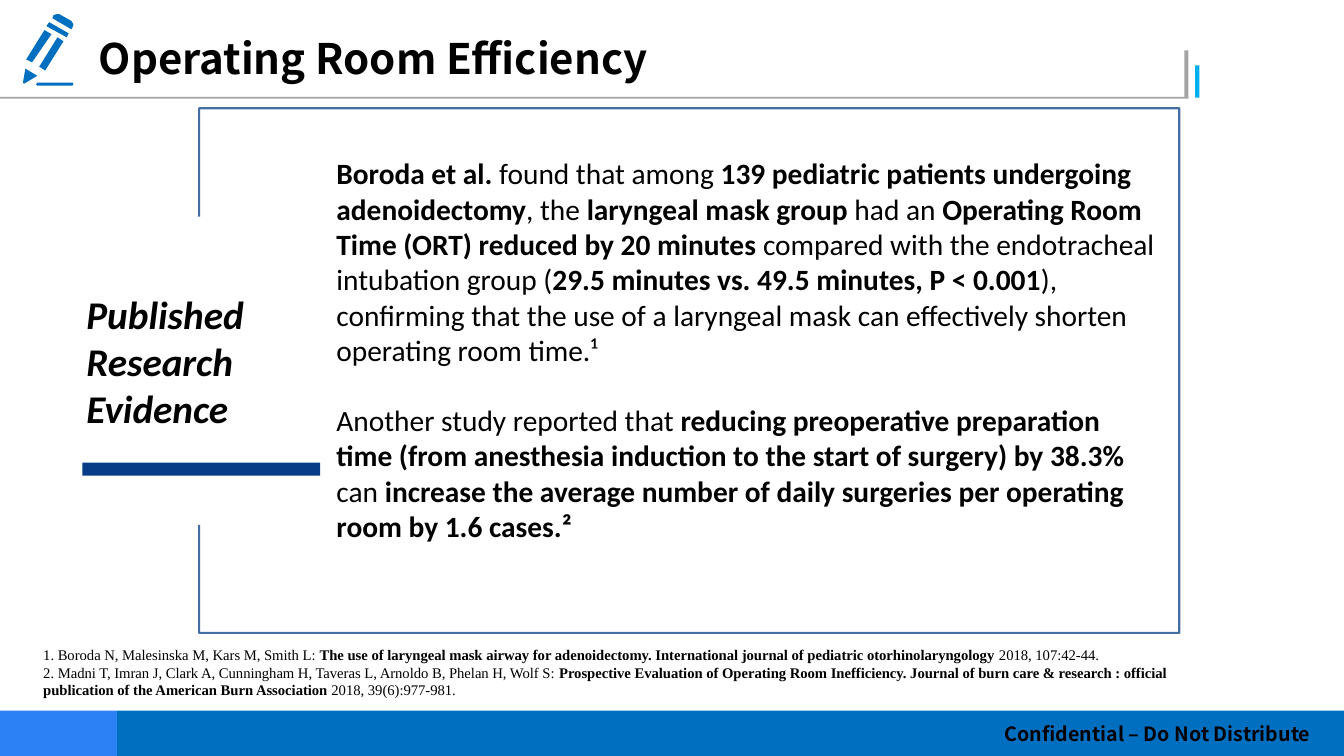
from dataclasses import dataclass

import lxml.etree
import pptx
import pptx.dml.color
import pptx.enum.shapes
import pptx.enum.text
import pptx.oxml.ns
import pptx.util

Cm = pptx.util.Cm
Pt = pptx.util.Pt
Point = tuple[float, float]


@dataclass(frozen=True)
class Theme:
    ink: str = "000000"
    blue: str = "006FC0"
    light_blue: str = "2C82F4"
    cyan: str = "00AFEF"
    navy: str = "063D86"
    grey: str = "A4A4A4"
    heading_font: str = "Noto Sans CJK SC"
    body_font: str = "Calibri"
    reference_font: str = "Times New Roman"
    title_size: float = 30
    label_size: float = 28
    body_size: float = 21
    footer_size: float = 14
    reference_size: float = 10.5


@dataclass(frozen=True)
class Bar:
    """A plain filled rectangle, in centimetres."""
    left: float
    top: float
    width: float
    height: float
    colour: str


THEME = Theme()

BARS = [
    Bar(0, 2.44, 29.95, 0.05, THEME.grey),
    Bar(29.85, 1.27, 0.1, 1.2, THEME.grey),
    Bar(30.12, 1.65, 0.11, 0.81, THEME.cyan),
    Bar(2.95, 17.91, 30.92, 1.14, THEME.blue),
    Bar(0, 17.91, 2.95, 1.14, THEME.light_blue),
    Bar(2.08, 11.66, 5.99, 0.33, THEME.navy),
]

PENCIL: list[list[Point]] = [
    [(1.8, 0.74), (1.32, 0.46), (1.35, 0.38), (1.42, 0.36), (1.5, 0.36),
     (1.8, 0.53), (1.85, 0.61), (1.83, 0.69)],
    [(1.68, 0.94), (1.17, 0.66), (1.24, 0.56), (1.73, 0.84)],
    [(0.81, 1.57), (0.66, 1.5), (1.12, 0.76), (1.3, 0.86)],
    [(1.14, 1.78), (0.99, 1.68), (1.45, 0.94), (1.6, 1.04)],
    [(0.61, 2.11), (0.58, 2.08), (0.64, 1.73), (0.94, 1.91)],
    [(1.83, 2.16), (0.94, 2.16), (0.91, 2.13), (0.94, 2.08), (1.83, 2.08), (1.85, 2.11)],
]

FRAME: list[Point] = [(5.02, 5.46), (5.02, 2.73), (29.72, 2.73),
                      (29.72, 15.95), (5.02, 15.95), (5.02, 13.23)]

FINDINGS = [
    "**Boroda et al.** found that among **139 pediatric patients undergoing adenoidectomy**, "
    "the **laryngeal mask group** had an **Operating Room Time (ORT) reduced by 20 minutes** "
    "compared with the endotracheal intubation group "
    "(**29.5 minutes vs. 49.5 minutes, P < 0.001**), confirming that the use of a laryngeal "
    "mask can effectively shorten operating room time.¹",
    "Another study reported that **reducing preoperative preparation time (from anesthesia "
    "induction to the start of surgery) by 38.3%** can **increase the average number of daily "
    "surgeries per operating room by 1.6 cases.²**",
]

REFERENCES = [
    "1. Boroda N, Malesinska M, Kars M, Smith L: **The use of laryngeal mask airway for "
    "adenoidectomy. International journal of pediatric otorhinolaryngology** 2018, 107:42-44.",
    "2. Madni T, Imran J, Clark A, Cunningham H, Taveras L, Arnoldo B, Phelan H, Wolf S:"
    "** Prospective Evaluation of Operating Room Inefficiency. Journal of burn care & research "
    ": official publication of the American Burn Association** 2018, 39(6):977-981.",
]


def rgb(colour: str) -> pptx.dml.color.RGBColor:
    return pptx.dml.color.RGBColor.from_string(colour)


def paint(shape, colour: str) -> None:
    shape.shadow.inherit = False
    shape.fill.solid()
    shape.fill.fore_color.rgb = rgb(colour)
    shape.line.fill.background()


def add_bar(slide, bar: Bar) -> None:
    shape = slide.shapes.add_shape(
        pptx.enum.shapes.MSO_SHAPE.RECTANGLE,
        Cm(bar.left), Cm(bar.top), Cm(bar.width), Cm(bar.height))
    paint(shape, bar.colour)


def add_outline(slide, contours: list[list[Point]], closed: bool):
    """Build one freeform from contours given in centimetres."""
    builder = None
    for contour in contours:
        start, *rest = [(Cm(x), Cm(y)) for x, y in contour]
        if builder is None:
            builder = slide.shapes.build_freeform(*start, scale=1.0)
        else:
            builder.move_to(*start)
        builder.add_line_segments(rest, close=closed)
    return builder.convert_to_shape()


def add_frame(slide) -> None:
    frame = add_outline(slide, [FRAME], closed=False)
    frame.shadow.inherit = False
    frame.fill.background()
    frame.line.width = Pt(1.5)
    frame.line.color.rgb = rgb(THEME.navy)
    line_colour = frame.element.xpath("./p:spPr/a:ln//a:srgbClr")[0]
    lxml.etree.SubElement(line_colour, pptx.oxml.ns.qn("a:alpha"), val="75000")


def write(holder, paragraphs: list[str], *, at: tuple[float, float, float, float],
          font: str, size: float, bold: bool = False, italic: bool = False,
          gap: float = 0, inset: float | None = None) -> None:
    """Place a text holder and fill it; text between ** marks is bold."""
    holder.left, holder.top, holder.width, holder.height = map(Cm, at)
    frame = holder.text_frame
    frame.word_wrap = True
    frame.auto_size = pptx.enum.text.MSO_AUTO_SIZE.NONE
    frame.vertical_anchor = pptx.enum.text.MSO_ANCHOR.TOP
    if inset is not None:
        frame.margin_left = frame.margin_right = frame.margin_bottom = 0
        frame.margin_top = Cm(inset)
    for number, text in enumerate(paragraphs):
        paragraph = frame.add_paragraph() if number else frame.paragraphs[0]
        paragraph.alignment = pptx.enum.text.PP_ALIGN.LEFT
        if number and gap:
            paragraph.space_before = Pt(gap)
        for part, words in enumerate(text.split("**")):
            if not words:
                continue
            run = paragraph.add_run()
            run.text = words
            run.font.name = font
            run.font.size = Pt(size)
            run.font.bold = bold or part % 2 == 1
            run.font.italic = italic
            run.font.color.rgb = rgb(THEME.ink)


def add_text(slide, paragraphs: list[str], **text_format) -> None:
    write(slide.shapes.add_textbox(0, 0, 0, 0), paragraphs, **text_format)


def main() -> None:
    presentation = pptx.Presentation()
    presentation.slide_width = Cm(33.87)
    presentation.slide_height = Cm(19.05)
    slide = presentation.slides.add_slide(presentation.slide_layouts[5])

    for bar in BARS:
        add_bar(slide, bar)
    paint(add_outline(slide, PENCIL, closed=True), THEME.blue)
    add_frame(slide)

    write(slide.shapes.title, ["Operating Room Efficiency"], at=(2.49, 0.76, 27.1, 1.32),
          font=THEME.heading_font, size=THEME.title_size, bold=True, inset=0.05)
    add_text(slide, FINDINGS, at=(8.48, 3.89, 20.7, 12.07),
             font=THEME.body_font, size=THEME.body_size, gap=25, inset=0.03)
    add_text(slide, REFERENCES, at=(0.84, 16.15, 30.4, 1.6),
             font=THEME.reference_font, size=THEME.reference_size)
    add_text(slide, ["Published Research Evidence"], at=(1.93, 7.19, 5.99, 3.84),
             font=THEME.body_font, size=THEME.label_size, bold=True, italic=True)
    add_text(slide, ["Confidential – Do Not Distribute"], at=(25.32, 18.16, 8.18, 0.64),
             font=THEME.heading_font, size=THEME.footer_size, bold=True, inset=0.03)

    presentation.save("out.pptx")


if __name__ == "__main__":
    main()
